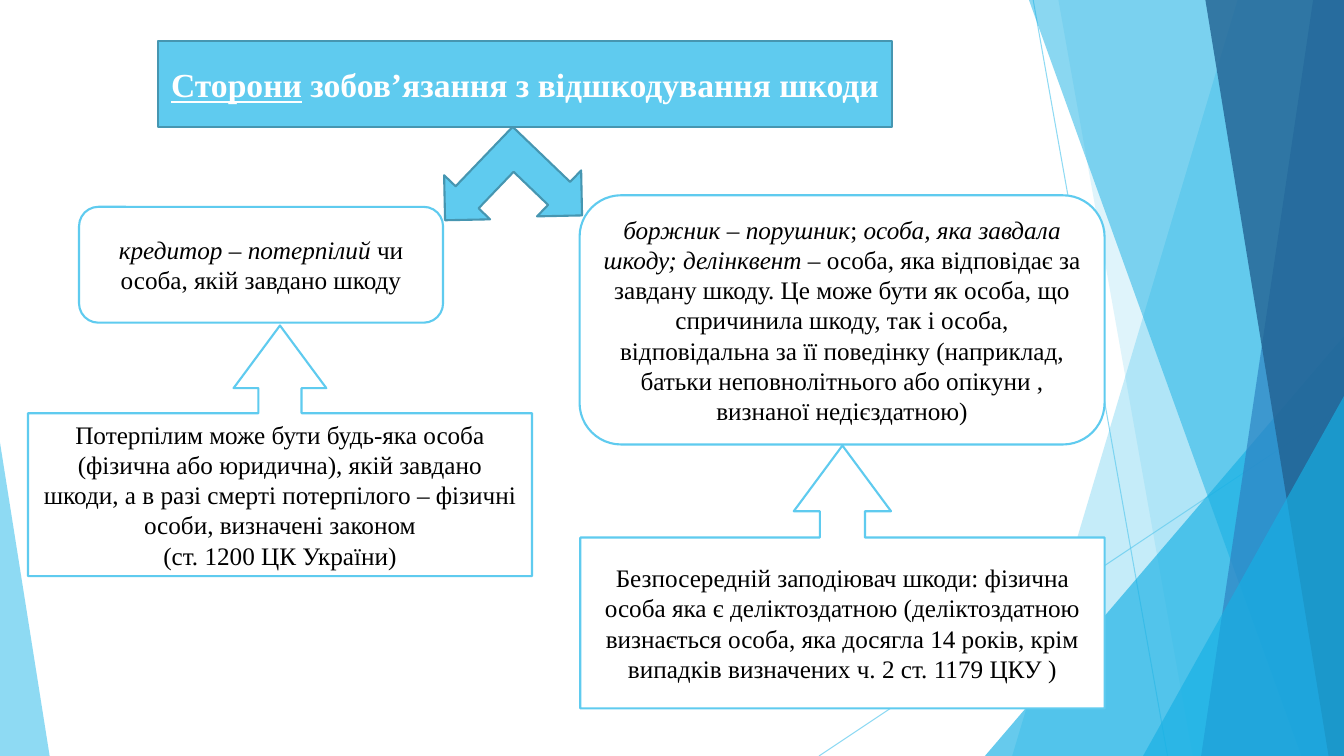
from dataclasses import dataclass

from lxml import etree
from pptx import Presentation
from pptx.dml.color import RGBColor
from pptx.enum.shapes import MSO_CONNECTOR, MSO_SHAPE
from pptx.enum.text import MSO_ANCHOR, MSO_AUTO_SIZE, PP_ALIGN
from pptx.oxml.ns import qn
from pptx.util import Pt

STRAIGHT = MSO_CONNECTOR.STRAIGHT
TRIANGLE = MSO_SHAPE.ISOSCELES_TRIANGLE
ROUNDED = MSO_SHAPE.ROUNDED_RECTANGLE
CALLOUT = MSO_SHAPE.UP_ARROW_CALLOUT
FORK = MSO_SHAPE.LEFT_UP_ARROW
MIDDLE = MSO_ANCHOR.MIDDLE
NO_AUTOFIT = MSO_AUTO_SIZE.NONE
CENTER = PP_ALIGN.CENTER

WIDTH, HEIGHT = 960, 540


@dataclass(frozen=True)
class Theme:
    font: str = "Times New Roman"
    title_size: int = 24
    body_size: int = 18
    border: float = 1.5
    hairline: float = 0.75
    sky: str = "5FCBEF"
    azure: str = "17B0E4"
    blue: str = "2E83C3"
    navy: str = "226292"
    edge: str = "4696B1"
    white: str = "FFFFFF"
    black: str = "000000"


THEME = Theme()


def rgb(color):
    return RGBColor.from_string(color)


def set_opacity(shape, percent):
    for clr in shape._element.iter(qn("a:srgbClr")):
        etree.SubElement(clr, qn("a:alpha")).set("val", str(percent * 1000))


def paint(shape, fill, line=None):
    shape.fill.solid()
    shape.fill.fore_color.rgb = rgb(fill)
    if line:
        shape.line.color.rgb = rgb(line)
        shape.line.width = Pt(THEME.border)
    else:
        shape.line.fill.background()


def add_hairline(s, x1, y1, x2, y2):
    line = s.shapes.add_connector(STRAIGHT, Pt(x1), Pt(y1), Pt(x2), Pt(y2))
    line.line.color.rgb = rgb(THEME.sky)
    line.line.width = Pt(THEME.hairline)
    set_opacity(line, 70)
    etree.SubElement(line._element.spPr, qn("a:effectLst"))


def add_facet(s, top_x, bottom_x, color, opacity):
    """Full-height panel with a slanted left side, ending at the right edge."""
    builder = s.shapes.build_freeform(Pt(top_x), 0)
    corners = [(WIDTH, 0), (WIDTH, HEIGHT), (bottom_x, HEIGHT)]
    builder.add_line_segments([(Pt(x), Pt(y)) for x, y in corners])
    facet = builder.convert_to_shape()
    facet.shadow.inherit = False
    paint(facet, color)
    set_opacity(facet, opacity)


def add_shape(s, kind, box, fill, line=None, adjustments=()):
    shape = s.shapes.add_shape(kind, *map(Pt, box))
    shape.shadow.inherit = False
    for i, value in enumerate(adjustments):
        shape.adjustments[i] = value
    paint(shape, fill, line)
    return shape


def add_corner(s, left, width, height, apex, color, opacity):
    """Right triangle standing on the bottom edge."""
    box = (left, HEIGHT - height, width, height)
    set_opacity(add_shape(s, TRIANGLE, box, color, adjustments=[apex]), opacity)


def write(shape, paragraphs, size, color):
    """Each paragraph is a list of (text, run attributes) pairs."""
    tf = shape.text_frame
    tf.word_wrap = True
    tf.auto_size = NO_AUTOFIT
    tf.vertical_anchor = MIDDLE
    for i, runs in enumerate(paragraphs):
        p = tf.add_paragraph() if i else tf.paragraphs[0]
        p.alignment = CENTER
        for text, attributes in runs:
            r = p.add_run()
            r.text = text
            r.font.name = THEME.font
            r.font.size = Pt(size)
            r.font.color.rgb = rgb(color)
            for name, value in attributes.items():
                setattr(r.font, name, value)


def add_box(s, kind, box, paragraphs, adjustments=()):
    shape = add_shape(s, kind, box, THEME.white, THEME.sky, adjustments)
    write(shape, paragraphs, THEME.body_size, THEME.black)


def add_callout(s, box, *lines):
    paragraphs = [[(line, {})] for line in lines]
    add_box(s, CALLOUT, box, paragraphs, [0.172, 0.185, 0.25, 0.65])


def add_backdrop(s):
    add_hairline(s, 738, 0, 834, HEIGHT)
    add_hairline(s, WIDTH, 290, 585, HEIGHT)
    add_facet(s, 884, 723, THEME.sky, 36)
    add_facet(s, 756, 852, THEME.sky, 20)
    add_corner(s, 703.5, 256.5, 300, 1, THEME.azure, 66)
    add_facet(s, 735, 929.5, THEME.azure, 50)
    add_facet(s, 938, 858, THEME.blue, 70)
    add_facet(s, 861, 949, THEME.navy, 80)
    add_corner(s, 816.5, 143.5, 257, 1, THEME.azure, 66)
    add_corner(s, 0, 35.5, 224, 0, THEME.sky, 70)


def add_title(s):
    title = s.shapes.title
    title.left, title.top, title.width, title.height = map(Pt, (113, 29.5, 524, 61.5))
    paint(title, THEME.sky, THEME.edge)
    bold = {"bold": True}
    runs = [("Сторони", {"bold": True, "underline": True}),
            (" зобов’язання з відшкодування шкоди", bold)]
    write(title, [runs], THEME.title_size, THEME.white)


def main():
    prs = Presentation()
    prs.slide_width, prs.slide_height = Pt(WIDTH), Pt(HEIGHT)
    s = prs.slides.add_slide(prs.slide_layouts[5])

    add_backdrop(s)
    add_title(s)

    # Fork from the title to the two parties
    fork = add_shape(s, FORK, (321, 93, 91, 93), THEME.sky, THEME.edge)
    fork.rotation = 223.8

    # Creditor and debtor
    italic = {"italic": True}
    add_box(s, ROUNDED, (56.5, 147.75, 260, 82.75), [[
        ("кредитор", italic), (" – ", {}), ("потерпілий", italic),
        (" чи особа, якій завдано шкоду", {})]])
    add_box(s, ROUNDED, (414, 139.5, 375, 178), [[
        ("боржник", italic), (" – ", {}), ("порушник", italic), ("; ", {}),
        ("особа, яка завдала шкоду; делінквент – ", italic),
        ("особа, яка відповідає за завдану шкоду. Це може бути як особа, "
         "що спричинила шкоду, так і особа, відповідальна за її поведінку "
         "(наприклад, батьки неповнолітнього або опікуни , "
         "визнаної недієздатною)", {})]])

    # Who each party can be
    add_callout(s, (20, 232.5, 360, 179),
                "Потерпілим може бути будь-яка особа (фізична або юридична), "
                "якій завдано шкоди, а в разі смерті потерпілого – фізичні "
                "особи, визначені законом",
                "(ст. 1200 ЦК України)")
    add_callout(s, (414.5, 318.25, 374.5, 187.75),
                "Безпосередній заподіювач шкоди: фізична особа яка є "
                "деліктоздатною (деліктоздатною визнається особа, яка досягла "
                "14 років, крім випадків визначених ч. 2 ст. 1179 ЦКУ )")

    prs.save("out.pptx")


if __name__ == "__main__":
    main()
